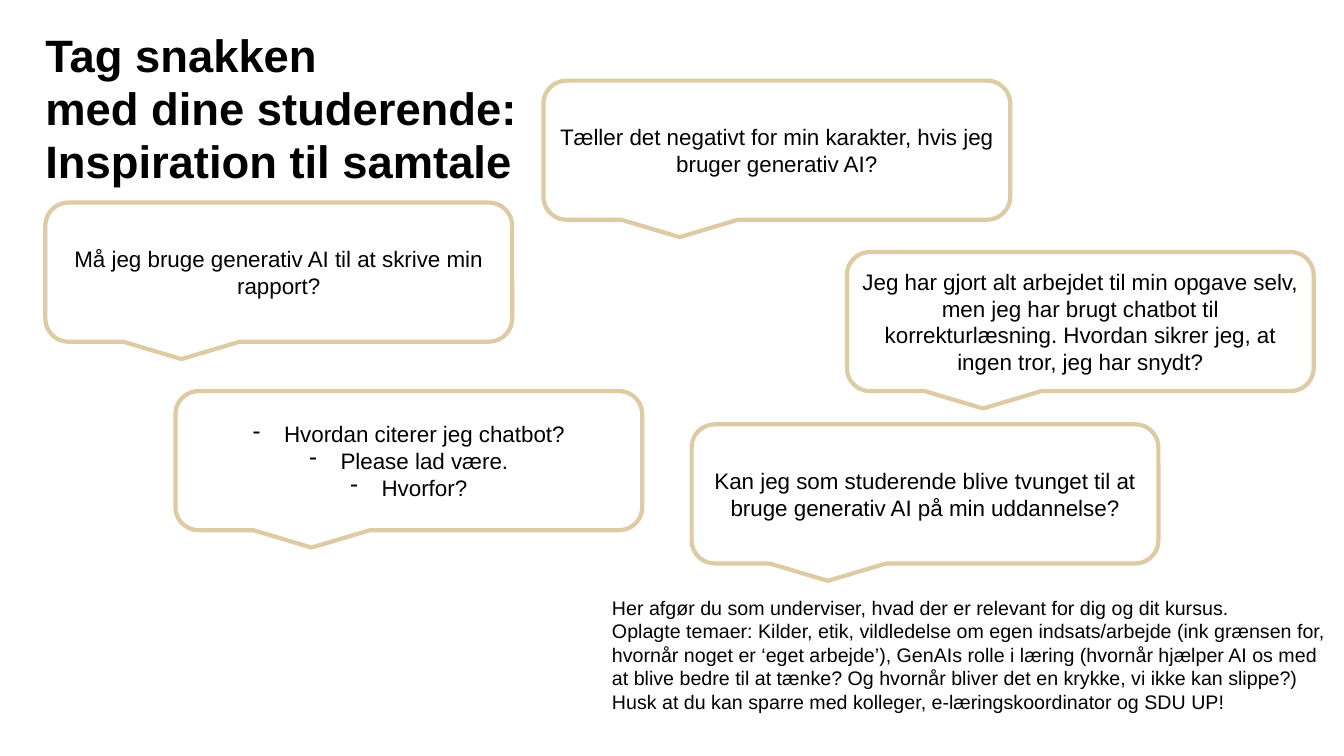
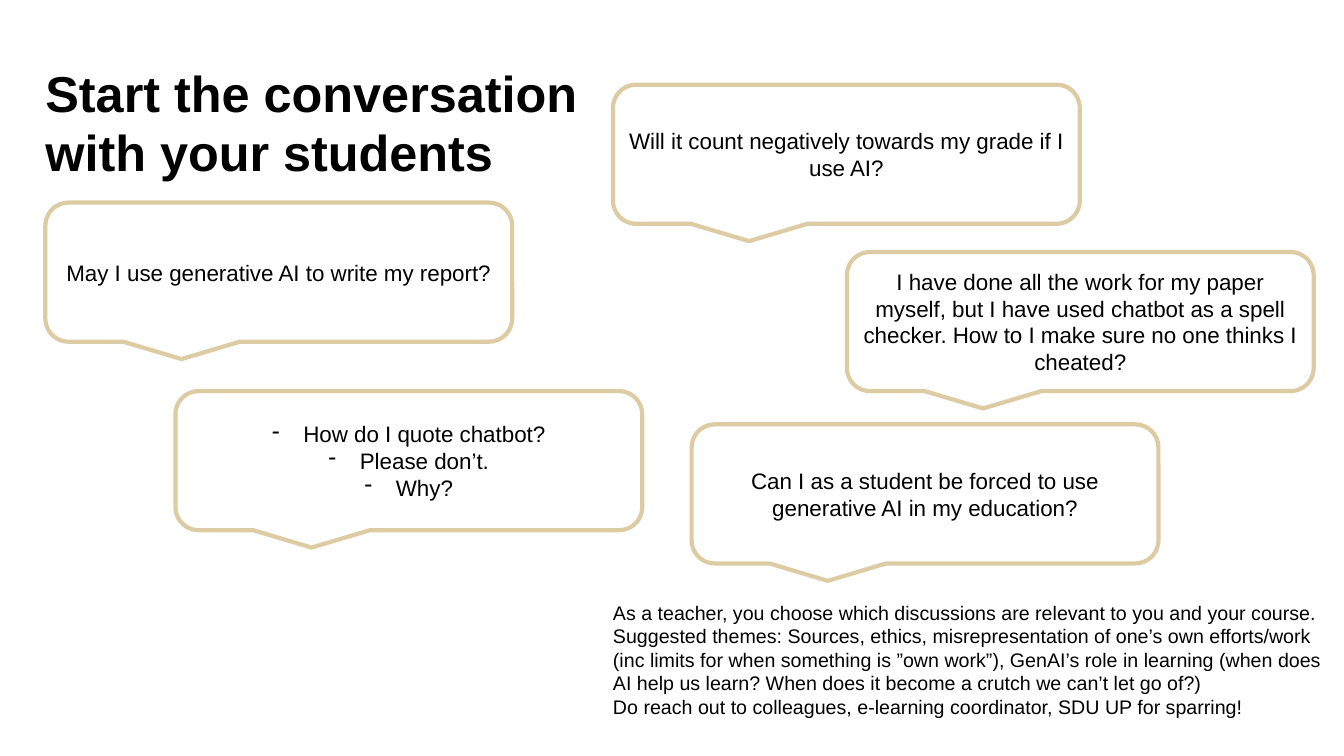
from dataclasses import dataclass

import lxml.etree
import pptx
import pptx.dml.color
import pptx.enum.shapes
import pptx.enum.text
import pptx.oxml.ns
import pptx.util

Inches = pptx.util.Inches
Align = pptx.enum.text.PP_ALIGN
Anchor = pptx.enum.text.MSO_ANCHOR
AutoSize = pptx.enum.text.MSO_AUTO_SIZE

# Shared style
BLACK = pptx.dml.color.RGBColor(0x00, 0x00, 0x00)
WHITE = pptx.dml.color.RGBColor(0xFF, 0xFF, 0xFF)
SAND = pptx.dml.color.RGBColor(0xDD, 0xCB, 0xA4)
FONT_NAME = "Arial"
BUBBLE_WIDTH, BUBBLE_HEIGHT = 4.63, 1.38
BUBBLE_INSET = 0.08
BULLET_INDENT = 0.31
NOTE_WIDTH, NOTE_HEIGHT = 7.2, 1.18

# Bubble places that both slides share
REPORT_PLACE = (0.45, 2.01)
CITATION_PLACE = (1.74, 3.88)
PROOFREADING_PLACE = (8.4, 2.5)
FORCED_PLACE = (6.86, 4.21)


@dataclass(frozen=True)
class Title:
    text: str
    top: float
    width: float
    height: float
    size: float


@dataclass(frozen=True)
class Bubble:
    place: tuple[float, float]
    lines: tuple[str, ...]
    bulleted: bool = False


@dataclass(frozen=True)
class Note:
    place: tuple[float, float]
    lines: tuple[str, ...]


@dataclass(frozen=True)
class Conversation:
    title: Title
    bubbles: tuple[Bubble, ...]
    note: Note


CONVERSATIONS = (
    Conversation(
        Title("Tag snakken\vmed dine studerende:\vInspiration til samtale", 0.3, 11.99, 1.7, 32.4),
        (
            Bubble(REPORT_PLACE, ("Må jeg bruge generativ AI til at skrive min rapport?",)),
            Bubble(
                CITATION_PLACE,
                ("Hvordan citerer jeg chatbot?", "Please lad være.", "Hvorfor?"),
                bulleted=True,
            ),
            Bubble(
                (5.39, 0.8),
                ("Tæller det negativt for min karakter, hvis jeg bruger generativ AI?",),
            ),
            Bubble(
                PROOFREADING_PLACE,
                ("Jeg har gjort alt arbejdet til min opgave selv, men jeg har brugt chatbot til "
                 "korrekturlæsning. Hvordan sikrer jeg, at ingen tror, jeg har snydt?",),
            ),
            Bubble(
                FORCED_PLACE,
                ("Kan jeg som studerende blive tvunget til at bruge generativ AI på min uddannelse?",),
            ),
        ),
        Note(
            (6.07, 5.91),
            (
                "Her afgør du som underviser, hvad der er relevant for dig og dit kursus.\v"
                "Oplagte temaer: Kilder, etik, vildledelse om egen indsats/arbejde (ink grænsen for, "
                "hvornår noget er ‘eget arbejde’), GenAIs rolle i læring (hvornår hjælper AI os med "
                "at blive bedre til at tænke? Og hvornår bliver det en krykke, vi ikke kan slippe?)",
                "Husk at du kan sparre med kolleger, e-læringskoordinator og SDU UP!",
            ),
        ),
    ),
    Conversation(
        Title("Start the conversation with your students", 0.65, 5.46, 1.2, 36),
        (
            Bubble(REPORT_PLACE, ("May I use generative AI to write my report?",)),
            Bubble(
                CITATION_PLACE,
                ("How do I quote chatbot?", "Please don’t.", "Why?"),
                bulleted=True,
            ),
            Bubble((6.08, 0.84), ("Will it count negatively towards my grade if I use AI?",)),
            Bubble(
                PROOFREADING_PLACE,
                ("I have done all the work for my paper myself, but I have used chatbot as a spell "
                 "checker. How to I make sure no one thinks I cheated?",),
            ),
            Bubble(
                FORCED_PLACE,
                ("Can I as a student be forced to use generative AI in my education?",),
            ),
        ),
        Note(
            (6.08, 5.96),
            (
                "As a teacher, you choose which discussions are relevant to you and your course. "
                "Suggested themes: Sources, ethics, misrepresentation of one’s own efforts/work "
                "(inc limits for when something is ”own work”), GenAI’s role in learning (when does "
                "AI help us learn? When does it become a crutch we can’t let go of?)",
                "Do reach out to colleagues, e-learning coordinator, SDU UP for sparring!",
            ),
        ),
    ),
)


def set_attributes(target: object, values: dict[str, object]) -> None:
    for name, value in values.items():
        setattr(target, name, value)


def format_frame(frame, inset: float, anchor, auto_size) -> None:
    margins = {f"margin_{side}": Inches(inset) for side in ("left", "top", "right", "bottom")}
    set_attributes(
        frame,
        margins | {"word_wrap": True, "vertical_anchor": anchor, "auto_size": auto_size},
    )


def add_dash(paragraph) -> None:
    properties = paragraph._p.get_or_add_pPr()
    properties.set("marL", str(Inches(BULLET_INDENT)))
    properties.set("indent", str(-Inches(BULLET_INDENT)))
    bullet = lxml.etree.SubElement(properties, pptx.oxml.ns.qn("a:buChar"))
    bullet.set("char", "-")


def write_lines(frame, lines: tuple[str, ...], size: float, alignment,
                bold: bool = False, bulleted: bool = False) -> None:
    frame.text = "\n".join(lines)
    for paragraph in frame.paragraphs:
        paragraph.alignment = alignment
        if bulleted:
            add_dash(paragraph)
        set_attributes(
            paragraph.font,
            {"name": FONT_NAME, "size": pptx.util.Pt(size), "bold": bold},
        )
        paragraph.font.color.rgb = BLACK


def format_title(shape, title: Title) -> None:
    set_attributes(shape, {
        "left": Inches(0.45),
        "top": Inches(title.top),
        "width": Inches(title.width),
        "height": Inches(title.height),
    })
    frame = shape.text_frame
    format_frame(frame, 0, Anchor.TOP, AutoSize.NONE)
    write_lines(frame, (title.text,), title.size, Align.LEFT, bold=True)
    frame.paragraphs[0].line_spacing = 0.97


def add_bubble(slide, bubble: Bubble) -> None:
    left, top = bubble.place
    shape = slide.shapes.add_shape(
        pptx.enum.shapes.MSO_SHAPE.ROUNDED_RECTANGULAR_CALLOUT,
        Inches(left), Inches(top), Inches(BUBBLE_WIDTH), Inches(BUBBLE_HEIGHT),
    )
    shape.shadow.inherit = False
    shape.fill.solid()
    shape.fill.fore_color.rgb = WHITE
    shape.line.color.rgb = SAND
    shape.line.width = pptx.util.Pt(3)
    format_frame(shape.text_frame, BUBBLE_INSET, Anchor.MIDDLE, AutoSize.NONE)
    write_lines(shape.text_frame, bubble.lines, 16, Align.CENTER, bulleted=bubble.bulleted)


def add_note(slide, note: Note) -> None:
    left, top = note.place
    shape = slide.shapes.add_textbox(
        Inches(left), Inches(top), Inches(NOTE_WIDTH), Inches(NOTE_HEIGHT)
    )
    format_frame(shape.text_frame, 0, Anchor.TOP, AutoSize.SHAPE_TO_FIT_TEXT)
    write_lines(shape.text_frame, note.lines, 14, Align.LEFT)


def main() -> None:
    presentation = pptx.Presentation()
    presentation.slide_width = Inches(13.33)
    presentation.slide_height = Inches(7.5)
    title_only = presentation.slide_layouts.get_by_name("Title Only")
    for conversation in CONVERSATIONS:
        slide = presentation.slides.add_slide(title_only)
        format_title(slide.shapes.title, conversation.title)
        for bubble in conversation.bubbles:
            add_bubble(slide, bubble)
        add_note(slide, conversation.note)
    presentation.save("out.pptx")


if __name__ == "__main__":
    main()
